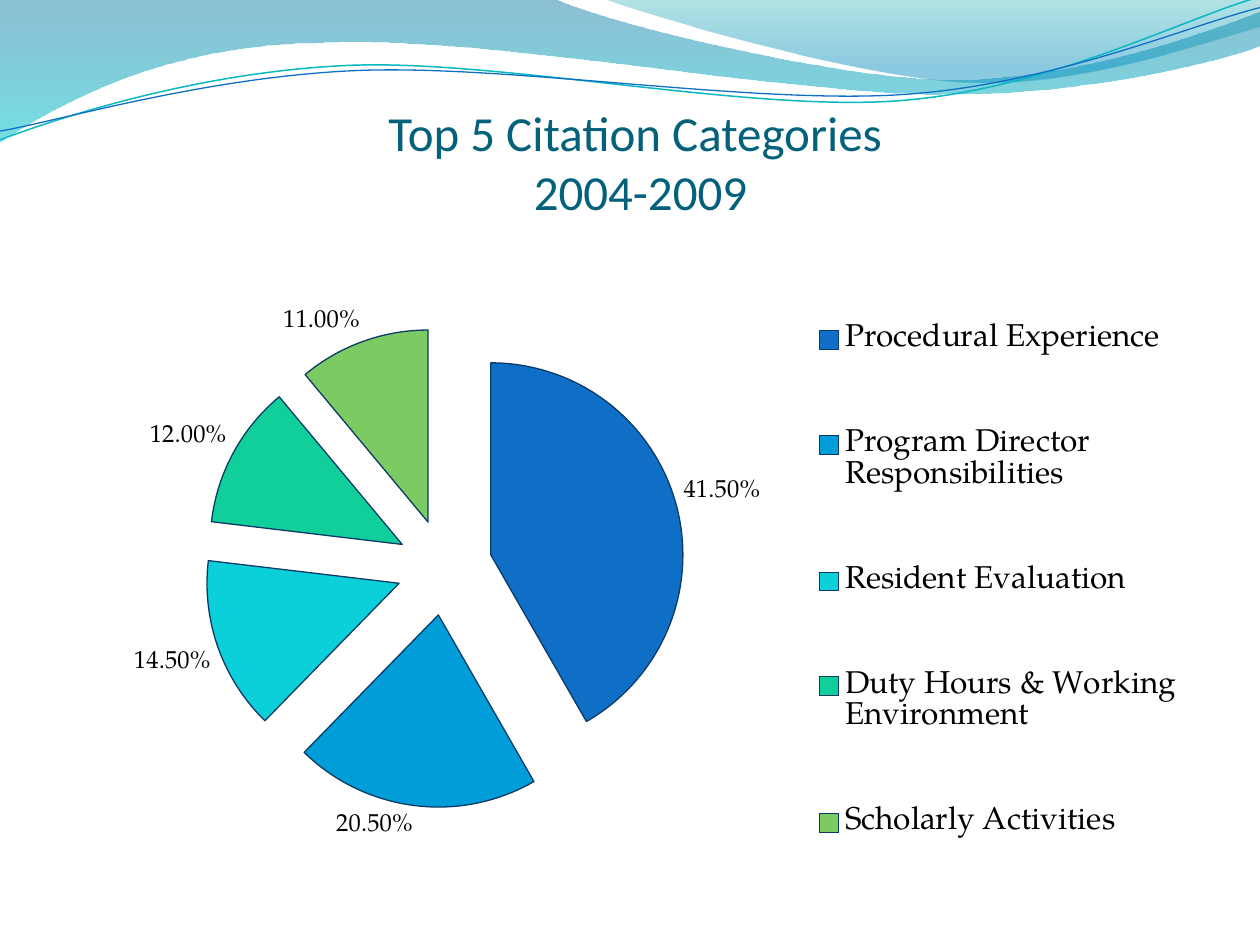
from dataclasses import dataclass

from lxml.etree import SubElement
from pptx import Presentation
from pptx.chart.data import CategoryChartData
from pptx.dml.color import RGBColor
from pptx.enum.chart import XL_CHART_TYPE, XL_LABEL_POSITION, XL_LEGEND_POSITION
from pptx.enum.text import MSO_ANCHOR, PP_ALIGN
from pptx.oxml import parse_xml
from pptx.oxml.ns import nsdecls, qn
from pptx.util import Pt

TITLE_COLOR = RGBColor(0x04, 0x61, 0x7B)
BLACK = RGBColor(0, 0, 0)
SLICE_OUTLINE = RGBColor(0x0B, 0x3A, 0x66)
BLUE = RGBColor(0x0F, 0x6F, 0xC6)
TEAL = RGBColor(0x0A, 0xB8, 0xBF)
CHART_FONT = "TeX Gyre Pagella"
CHART_WIDTH, CHART_HEIGHT = 648, 390


@dataclass(frozen=True)
class GradientStop:
    position: float
    color: RGBColor
    opacity: int


@dataclass(frozen=True)
class Wave:
    """An outline in points; a segment is a line (x, y) or a cubic curve (six numbers)."""
    start: tuple[float, float]
    segments: list[tuple[float, ...]]
    gradient: tuple[GradientStop, ...] = ()
    line_color: RGBColor | None = None
    line_width: float = 0


@dataclass(frozen=True)
class Slice:
    category: str
    value: float
    color: RGBColor


WAVES = [
    Wave((0, -0.7), [
        (316.8, -0.7),
        (342.7, 12.2, 478.1, 45.4, 545.8, 45.4),
        (614.2, 45.4, 689.8, 18.7, 720, 6.5),
        (720.7, 25.9),
        (707.8, 31.7, 626.4, 54.7, 537.1, 54),
        (447.8, 54, 275, 20.2, 185, 24.5),
        (92.9, 25.2, 33.1, 59.8, -0.7, 81.4),
        (0, -0.7),
    ], gradient=(GradientStop(0, RGBColor(0x00, 0x74, 0xA1), 45),
                 GradientStop(1, RGBColor(0x00, 0xC6, 0xCF), 55))),
    Wave((344.9, -0.7), [
        (366.5, 7.9, 491, 44.6, 553.7, 46.8),
        (616.3, 49.7, 691.9, 23, 720, 15.1),
        (720, 0),
        (344.9, -0.7),
    ], gradient=(GradientStop(0, RGBColor(0x00, 0xA1, 0xA9), 30),
                 GradientStop(0.8, RGBColor(0x00, 0x8B, 0xBF), 45))),
    Wave((0, 79.9), [
        (34.6, 67, 113.8, 41, 199.4, 37.4),
        (284.4, 33.8, 427, 64.1, 513.4, 57.6),
        (599.8, 51.1, 675.4, 10.8, 718.6, -1.4),
    ], line_color=TEAL, line_width=0.85),
    Wave((0, 74.9), [
        (33.8, 69.1, 118.1, 43.9, 203.8, 40.3),
        (290.2, 36.7, 429.8, 59.8, 516.2, 54),
        (601.9, 48.2, 677.5, 15.1, 720, 4.3),
    ], line_color=BLUE, line_width=0.75),
]

SLICES = [
    Slice("Procedural Experience", 0.415, BLUE),
    Slice("Program Director Responsibilities", 0.205, RGBColor(0x00, 0x9D, 0xD9)),
    Slice("Resident Evaluation", 0.145, RGBColor(0x0B, 0xD0, 0xD9)),
    Slice("Duty Hours & Working Environment", 0.12, RGBColor(0x10, 0xCF, 0x9B)),
    Slice("Scholarly Activities", 0.11, RGBColor(0x7C, 0xCA, 0x62)),
]


def bend_segments(shape, segments: list[tuple[float, ...]]) -> None:
    """Turn the straight segments that stand for curves into cubic curves."""
    straight_lines = list(shape.element.spPr.iter(qn("a:lnTo")))
    for line, segment in zip(straight_lines, segments):
        if len(segment) == 2:
            continue
        line.tag = qn("a:cubicBezTo")
        line.clear()
        for x, y in zip(segment[::2], segment[1::2]):
            point = SubElement(line, qn("a:pt"))
            point.set("x", str(Pt(x) - shape.left))
            point.set("y", str(Pt(y) - shape.top))


def draw_wave(slide, wave: Wave) -> None:
    ends = [(Pt(segment[-2]), Pt(segment[-1])) for segment in wave.segments]
    builder = slide.shapes.build_freeform(Pt(wave.start[0]), Pt(wave.start[1]))
    builder.add_line_segments(ends, close=bool(wave.gradient))
    shape = builder.convert_to_shape()
    bend_segments(shape, wave.segments)
    shape.shadow.inherit = False
    if wave.gradient:
        shape.line.fill.background()
        shape.fill.gradient()
        shape.fill.gradient_angle = 270
        for stop, setting in zip(shape.fill.gradient_stops, wave.gradient):
            stop.position = setting.position
            stop.color.rgb = setting.color
        for color, setting in zip(shape.element.spPr.iter(qn("a:srgbClr")), wave.gradient):
            SubElement(color, qn("a:alpha")).set("val", str(setting.opacity * 1000))
    else:
        shape.fill.background()
        shape.line.color.rgb = wave.line_color
        shape.line.width = Pt(wave.line_width)


def draw_title(slide) -> None:
    text_frame = slide.shapes.add_textbox(Pt(42), Pt(54), Pt(648), Pt(72)).text_frame
    text_frame.word_wrap = True
    text_frame.vertical_anchor = MSO_ANCHOR.BOTTOM
    text_frame.margin_left = text_frame.margin_right = text_frame.margin_bottom = 0
    text_frame.margin_top = Pt(3.6)
    paragraph = text_frame.paragraphs[0]
    paragraph.text = "Top 5 Citation Categories \v2004-2009"
    paragraph.alignment = PP_ALIGN.CENTER
    for run in paragraph.runs:
        run.font.name = "Calibri"
        run.font.size = Pt(28)
        run.font.color.rgb = TITLE_COLOR


def set_layout(parent, index: int, box: tuple[float, ...], inner: bool = False) -> None:
    """Fix a chart part at (left, top, width, height), in points within the chart."""
    for old_layout in parent.findall(qn("c:layout")):
        parent.remove(old_layout)
    target = '<c:layoutTarget val="inner"/>' if inner else ""
    modes = '<c:xMode val="edge"/><c:yMode val="edge"/>'
    wholes = (CHART_WIDTH, CHART_HEIGHT) * 2
    sizes = "".join(f'<c:{name} val="{length / whole:.4f}"/>'
                    for name, length, whole in zip("xywh", box, wholes))
    parent.insert(index, parse_xml(
        f'<c:layout {nsdecls("c")}><c:manualLayout>{target}{modes}{sizes}'
        "</c:manualLayout></c:layout>"))


def draw_pie(slide) -> None:
    chart_data = CategoryChartData(number_format="0.00%")
    chart_data.categories = [item.category for item in SLICES]
    chart_data.add_series("Series 1", [item.value for item in SLICES])
    chart = slide.shapes.add_chart(
        XL_CHART_TYPE.PIE, Pt(36), Pt(132), Pt(CHART_WIDTH), Pt(CHART_HEIGHT),
        chart_data).chart
    chart.has_title = False
    chart.font.name = CHART_FONT
    chart.font.size = Pt(18)
    chart.font.color.rgb = BLACK

    chart.has_legend = True
    chart.legend.position = XL_LEGEND_POSITION.RIGHT
    chart.legend.include_in_layout = False
    plot = chart.plots[0]
    plot.vary_by_categories = True
    series = plot.series[0]
    series._element.find(qn("c:tx")).addnext(
        parse_xml(f'<c:explosion {nsdecls("c")} val="25"/>'))
    for index, item in enumerate(SLICES):
        point_format = series.points[index].format
        point_format.fill.solid()
        point_format.fill.fore_color.rgb = item.color
        point_format.line.color.rgb = SLICE_OUTLINE
        point_format.line.width = Pt(0.75)

    labels = series.data_labels
    labels.show_value = True
    labels.number_format = "0.00%"
    labels.number_format_is_linked = False
    labels.position = XL_LABEL_POSITION.OUTSIDE_END
    labels.font.name = CHART_FONT
    labels.font.size = Pt(14)
    labels.font.color.rgb = BLACK

    set_layout(chart._chartSpace.chart.plotArea, 0, (44, 55, 348, 274.5), inner=True)
    set_layout(chart.legend._element, 1, (424.2, 11.4, 220, 378))


def main() -> None:
    presentation = Presentation()
    presentation.slide_width, presentation.slide_height = Pt(720), Pt(540)
    slide = presentation.slides.add_slide(presentation.slide_layouts[6])
    for wave in WAVES:
        draw_wave(slide, wave)
    draw_title(slide)
    draw_pie(slide)
    presentation.save("out.pptx")


if __name__ == "__main__":
    main()
